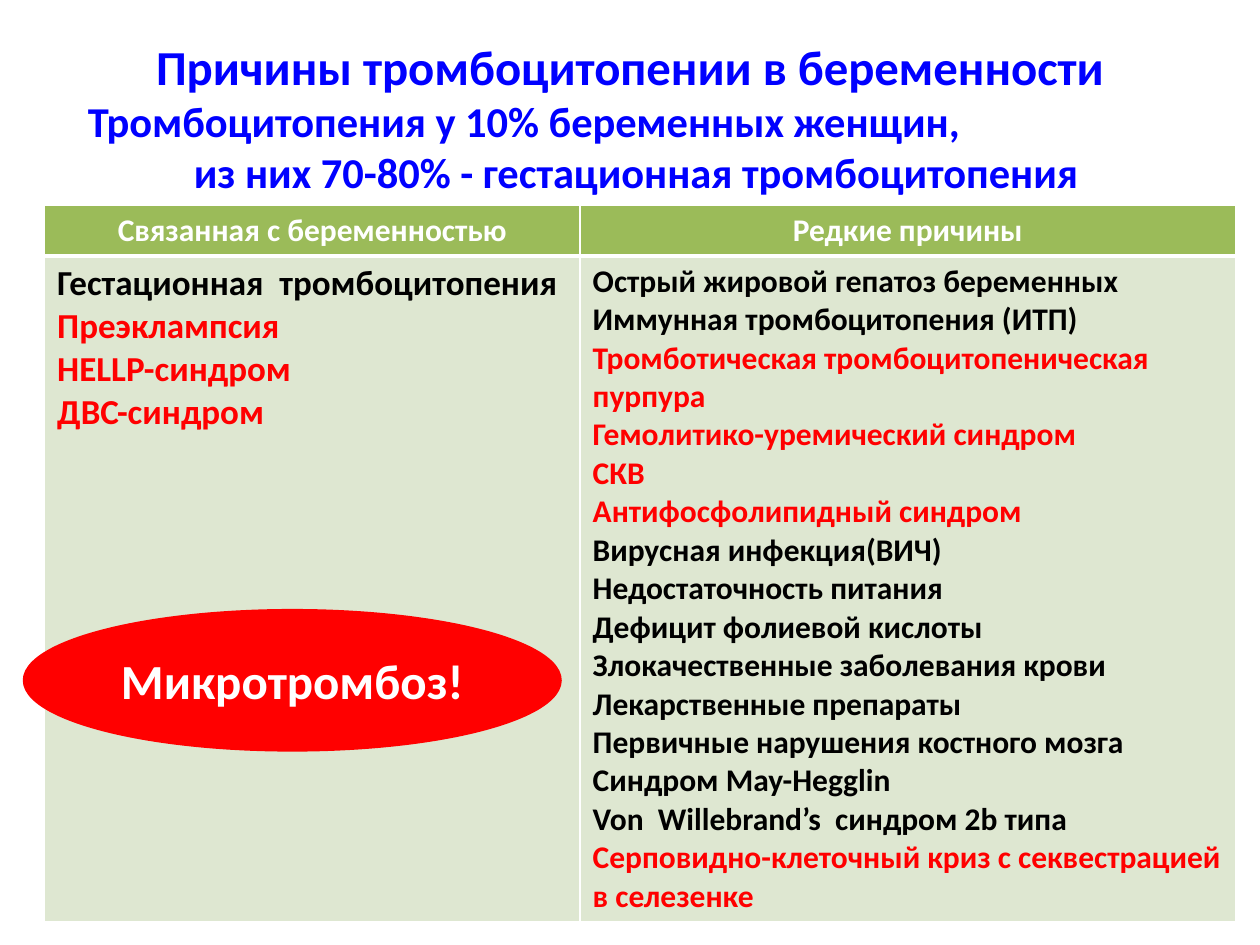
from lxml import etree
from pptx import Presentation
from pptx import util as u
from pptx.dml.color import RGBColor
from pptx.enum import shapes, text
from pptx.oxml.ns import qn

BLACK, WHITE, RED, BLUE = "000000", "FFFFFF", "FF0000", "0000FF"
GREEN, PALE = "9BBB59", "DEE7D1"
CENTER, LEFT = text.PP_ALIGN.CENTER, text.PP_ALIGN.LEFT


def rgb(value):
    return RGBColor.from_string(value)


def write(p, content, size=18, color=BLACK, align=LEFT, indent=0, font="Calibri"):
    """Put one bold formatted run into a paragraph."""
    p.alignment = align
    p.space_before = u.Pt(0)
    if indent:
        p._p.get_or_add_pPr().set("marL", str(u.Pt(indent)))
    r = p.add_run()
    r.text = content
    r.font.name, r.font.size, r.font.bold = font, u.Pt(size), True
    r.font.color.rgb = rgb(color)


def write_all(tf, lines):
    """Write (text, format) pairs, one paragraph each."""
    for i, (content, style) in enumerate(lines):
        write(tf.add_paragraph() if i else tf.paragraphs[0], content, **style)


def border(side, width, color=WHITE):
    ln = etree.Element(qn("a:" + side), w=str(u.Pt(width)))
    fill = etree.SubElement(ln, qn("a:solidFill"))
    etree.SubElement(fill, qn("a:srgbClr"), val=color)
    return ln


class Deck:
    def __init__(self, width, height):
        self.prs = Presentation()
        self.prs.slide_width, self.prs.slide_height = u.Pt(width), u.Pt(height)
        self.s = self.prs.slides.add_slide(self.prs.slide_layouts[5])

    def title(self, box, lines):
        sp = self.s.shapes.title
        sp.left, sp.top, sp.width, sp.height = map(u.Pt, box)
        tf = sp.text_frame
        tf.auto_size = text.MSO_AUTO_SIZE.NONE
        tf.vertical_anchor = text.MSO_ANCHOR.MIDDLE
        write_all(tf, lines)

    def table(self, left, top, widths, heights, rows):
        frame = self.s.shapes.add_table(
            len(heights), len(widths), u.Pt(left), u.Pt(top),
            u.Pt(sum(widths)), u.Pt(sum(heights)))
        table = frame.table
        for col, width in zip(table.columns, widths):
            col.width = u.Pt(width)
        for i, (height, row) in enumerate(zip(heights, rows)):
            table.rows[i].height = u.Pt(height)
            for j, lines in enumerate(row):
                self.cell(table.cell(i, j), lines, header=i == 0)

    def cell(self, cell, lines, header):
        write_all(cell.text_frame, lines)
        cell.fill.solid()
        cell.fill.fore_color.rgb = rgb(GREEN if header else PALE)
        # A thick rule separates the header from the body
        thick = "lnB" if header else "lnT"
        for i, side in enumerate(("lnL", "lnR", "lnT", "lnB")):
            line = border(side, 3 if side == thick else 1)
            cell._tc.get_or_add_tcPr().insert(i, line)

    def ellipse(self, box, content, fill, **style):
        sp = self.s.shapes.add_shape(shapes.MSO_SHAPE.OVAL, *map(u.Pt, box))
        sp.shadow.inherit = False
        sp.fill.solid()
        sp.fill.fore_color.rgb = sp.line.color.rgb = rgb(fill)
        sp.line.width = u.Pt(2)
        sp.text_frame.vertical_anchor = text.MSO_ANCHOR.MIDDLE
        write(sp.text_frame.paragraphs[0], content, **style)


def items(size, *groups):
    """Turn (colour, texts) groups into formatted list lines."""
    return [(t, dict(size=size, color=color)) for color, texts in groups for t in texts]


def main():
    deck = Deck(720, 540)

    # Title
    deck.title((36, 21.6, 648, 90), [
        ("Причины тромбоцитопении в беременности",
         dict(size=27.9, color=BLUE, align=CENTER)),
        ("Тромбоцитопения у 10% беременных женщин,",
         dict(size=24.3, color=BLUE, indent=7)),
        ("из них 70-80% - гестационная тромбоцитопения",
         dict(size=24.3, color=BLUE, align=CENTER)),
    ])

    # Table of causes
    head = dict(color=WHITE, align=CENTER)
    pregnancy = items(
        20,
        (BLACK, ["Гестационная  тромбоцитопения"]),
        (RED, ["Преэклампсия", "HELLP-синдром", "ДВС-синдром"]))
    rare = items(
        18,
        (BLACK, ["Острый жировой гепатоз беременных",
                 "Иммунная тромбоцитопения (ИТП)"]),
        (RED, ["Тромботическая тромбоцитопеническая пурпура",
               "Гемолитико-уремический синдром",
               "СКВ",
               "Антифосфолипидный синдром"]),
        (BLACK, ["Вирусная инфекция(ВИЧ)",
                 "Недостаточность питания",
                 "Дефицит фолиевой кислоты",
                 "Злокачественные заболевания крови",
                 "Лекарственные препараты",
                 "Первичные нарушения костного мозга",
                 "Синдром May-Hegglin",
                 "Von  Willebrand’s  синдром 2b типа"]),
        (RED, ["Серповидно-клеточный криз с секвестрацией в селезенке"]))
    deck.table(25.5, 117, (306, 374.5), (29.2, 374.8), [
        [[("Связанная с беременностью", head)], [("Редкие причины", head)]],
        [pregnancy, rare],
    ])

    # Callout
    deck.ellipse((14, 349, 306, 79.5), "Микротромбоз!", RED,
                 size=28, color=WHITE, align=CENTER)

    deck.prs.save("out.pptx")


if __name__ == "__main__":
    main()
